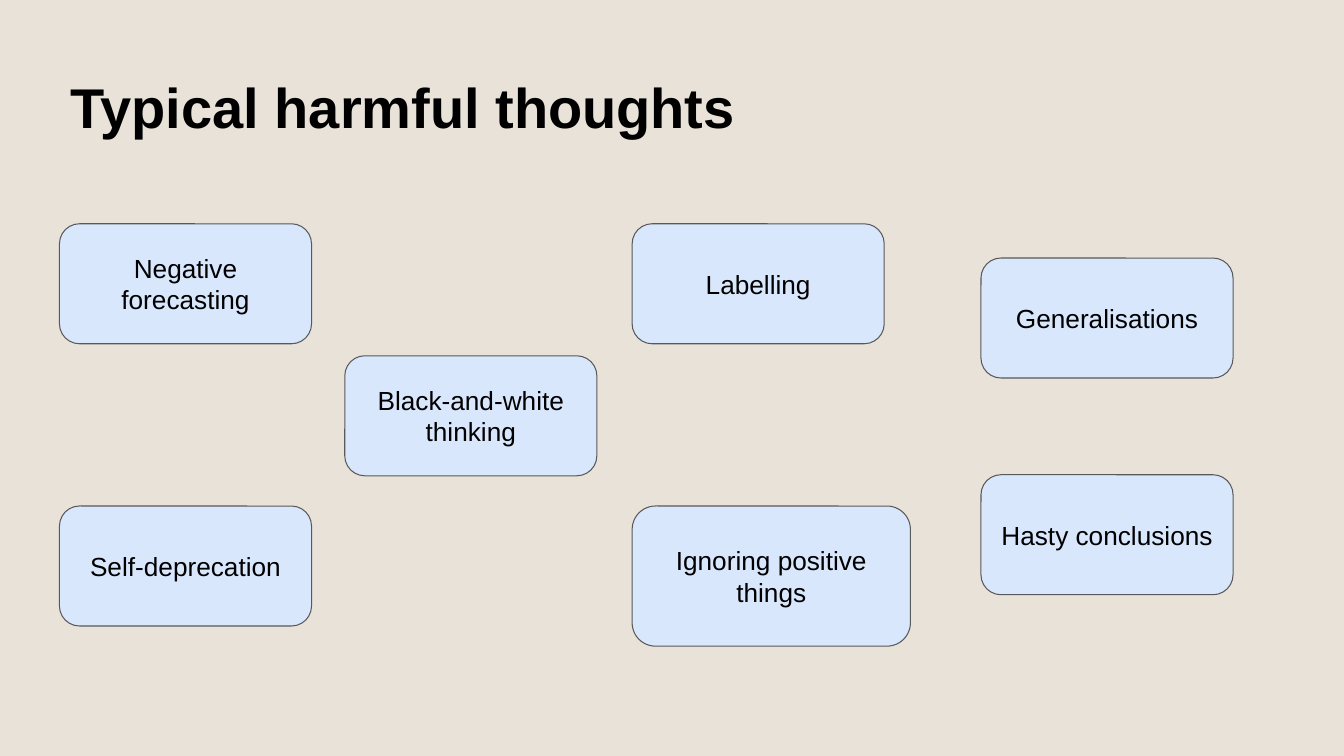
"""Build a slide of typical harmful thoughts as cards on a loose grid."""
from dataclasses import dataclass

from pptx import Presentation
from pptx.dml.color import RGBColor as Rgb
from pptx.enum.shapes import MSO_SHAPE as Kind
from pptx.enum.text import MSO_ANCHOR as Anchor
from pptx.enum.text import MSO_AUTO_SIZE as Fit
from pptx.enum.text import PP_ALIGN as Align
from pptx.slide import Slide
from pptx.text.text import TextFrame as Frame
from pptx.util import Inches, Pt


@dataclass(frozen=True)
class Theme:
    ground: Rgb = Rgb.from_string("E8E2D8")
    fill: Rgb = Rgb.from_string("D9E7FD")
    edge: Rgb = Rgb.from_string("595959")
    ink: Rgb = Rgb.from_string("000000")
    face: str = "Arial"
    head: float = 40
    body: float = 18.7
    line: float = 0.75
    inset: float = 0.13


@dataclass(frozen=True)
class Card:
    text: str
    col: int
    row: int
    width: float = 2.5
    height: float = 1.19


THEME = Theme()
COLS = (0.59, 3.42, 6.27, 9.73)
ROWS = (2.22, 2.56, 3.53, 4.71, 5.02)
CARDS = (
    Card("Generalisations", 3, 1),
    Card("Hasty conclusions", 3, 3),
    Card("Black-and-white thinking", 1, 2),
    Card("Ignoring positive things", 2, 4, 2.76, 1.39),
    Card("Negative forecasting", 0, 0),
    Card("Self-deprecation", 0, 4),
    Card("Labelling", 2, 0),
)


def write(frame: Frame, text: str, size: float, align: Align, bold: bool = False) -> None:
    """Put one styled paragraph into a text frame."""
    frame.word_wrap = True
    frame.margin_left = frame.margin_right = Inches(THEME.inset)
    frame.margin_top = frame.margin_bottom = Inches(THEME.inset)
    line = frame.paragraphs[0]
    line.text = text
    line.alignment = align
    font = line.font
    font.name, font.size, font.bold = THEME.face, Pt(size), bold
    font.color.rgb = THEME.ink


def draw_title(slide: Slide, text: str) -> None:
    """Draw the slide title."""
    box = slide.shapes.add_textbox(Inches(0.57), Inches(0.59), Inches(10.36), Inches(0.94))
    write(box.text_frame, text, THEME.head, Align.LEFT, True)
    box.text_frame.auto_size = Fit.SHAPE_TO_FIT_TEXT


def draw_card(slide: Slide, card: Card) -> None:
    """Draw one rounded card at its column and row."""
    shape = slide.shapes.add_shape(
        Kind.ROUNDED_RECTANGLE, Inches(COLS[card.col]), Inches(ROWS[card.row]),
        Inches(card.width), Inches(card.height))
    shape.shadow.inherit = False
    shape.fill.solid()
    shape.fill.fore_color.rgb = THEME.fill
    shape.line.color.rgb = THEME.edge
    shape.line.width = Pt(THEME.line)
    shape.text_frame.vertical_anchor = Anchor.MIDDLE
    write(shape.text_frame, card.text, THEME.body, Align.CENTER)


def main() -> None:
    """Build and save the deck."""
    deck = Presentation()
    deck.slide_width, deck.slide_height = Inches(13.33), Inches(7.5)
    slide = deck.slides.add_slide(deck.slide_layouts[6])
    slide.background.fill.solid()
    slide.background.fill.fore_color.rgb = THEME.ground
    for card in CARDS:
        draw_card(slide, card)
    draw_title(slide, "Typical harmful thoughts")
    deck.save("out.pptx")


if __name__ == "__main__":
    main()
